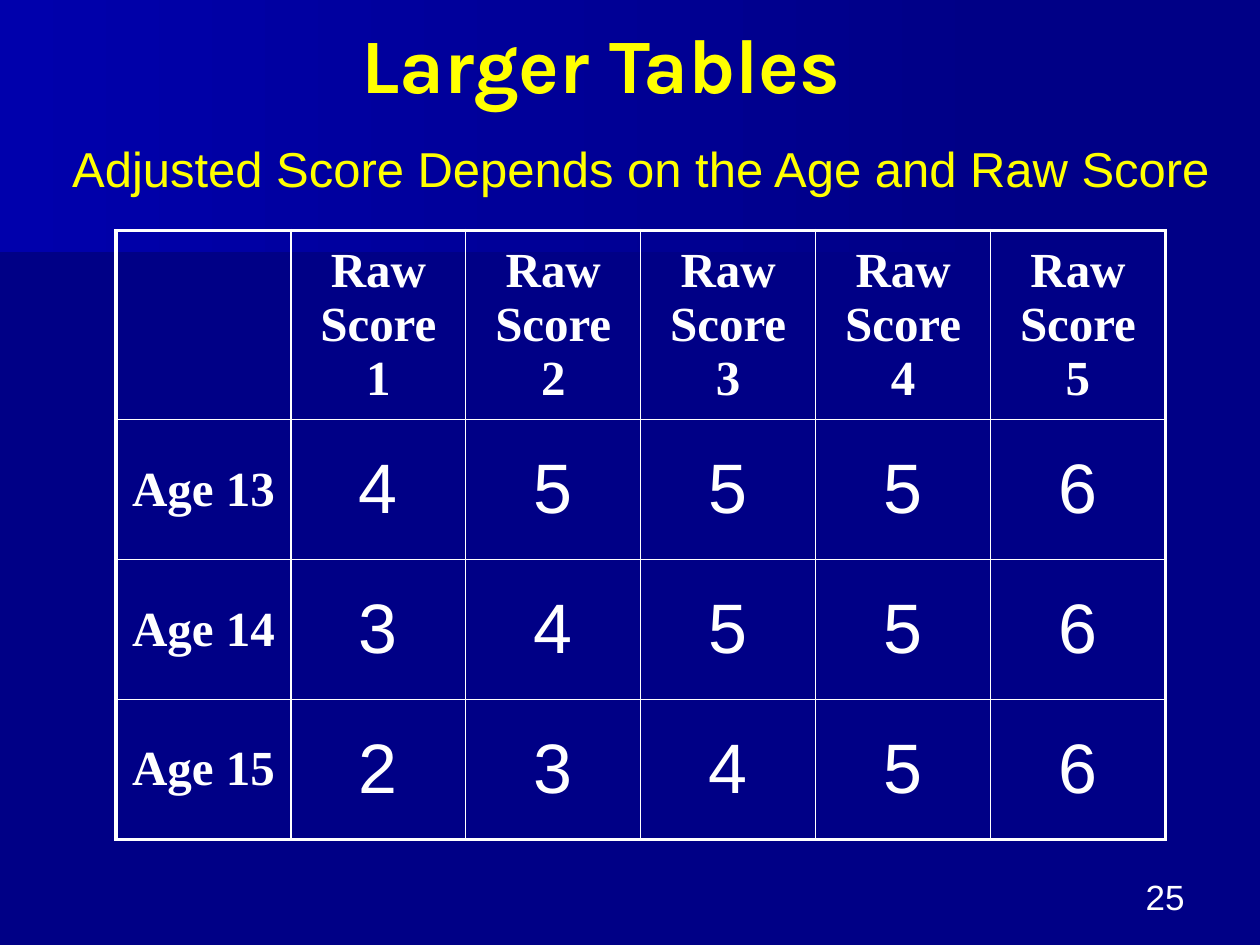
from dataclasses import dataclass

from lxml import etree
from pptx import Presentation
from pptx import util as u
from pptx.dml import color
from pptx.enum import text
from pptx.oxml import ns

WHITE, YELLOW, NAVY = "FFFFFF", "FFFF00", "000086"


@dataclass
class Band:
    points: list[tuple[float, float]]
    start_colour: str


BANDS = [
    Band([(0, 1.01), (7.79, 1.01), (7.78, 1.53), (0, 2.17)], "000083"),
    Band([(0, 0), (7.92, 0), (7.92, 1.62), (0, 2.08)], "0000AC"),
]

SCORES = {
    "Age 13": [4, 5, 5, 5, 6],
    "Age 14": [3, 4, 5, 5, 6],
    "Age 15": [2, 3, 4, 5, 6],
}


def rgb(value: str) -> color.RGBColor:
    return color.RGBColor.from_string(value)


def write(frame, words: str, *, size: float, font: str = "Arial",
          colour: str = WHITE, bold: bool = False,
          align=text.PP_ALIGN.CENTER) -> None:
    paragraph = frame.paragraphs[0]
    paragraph.alignment = align
    paragraph.space_before = u.Pt(0)
    run = paragraph.add_run()
    run.text = words
    run.font.size = u.Pt(size)
    run.font.name = font
    run.font.bold = bold
    run.font.color.rgb = rgb(colour)


def place(shape, left: float, top: float, width: float, height: float) -> None:
    shape.left, shape.top = u.Inches(left), u.Inches(top)
    shape.width, shape.height = u.Inches(width), u.Inches(height)


def add_text(slide, left: float, top: float, width: float, height: float,
             words: str, anchor=text.MSO_ANCHOR.TOP, **style):
    box = slide.shapes.add_textbox(0, 0, 0, 0)
    place(box, left, top, width, height)
    box.text_frame.word_wrap = True
    box.text_frame.vertical_anchor = anchor
    write(box.text_frame, words, **style)
    return box


def draw_band(slide, band: Band) -> None:
    builder = slide.shapes.build_freeform(*band.points[0], scale=u.Inches(1))
    builder.add_line_segments(band.points[1:], close=True)
    shape = builder.convert_to_shape()
    shape.shadow.inherit = False
    shape.line.fill.background()
    shape.fill.gradient()
    shape.fill.gradient_angle = 0
    for stop, value in zip(shape.fill.gradient_stops, (band.start_colour, NAVY)):
        stop.color.rgb = rgb(value)


def set_borders(cell, widths: dict[str, float]) -> None:
    properties = cell._tc.get_or_add_tcPr()
    for side, width in widths.items():
        line = etree.SubElement(properties, ns.qn(f"a:ln{side}"), w=str(u.Pt(width)))
        fill = etree.SubElement(line, ns.qn("a:solidFill"))
        etree.SubElement(fill, ns.qn("a:srgbClr"), val=WHITE)


def draw_score_table(slide) -> None:
    header = [""] + [f"Raw Score {score}" for score in range(1, 6)]
    grid = [header] + [[age, *values] for age, values in SCORES.items()]
    last_row, last_column = len(grid) - 1, len(header) - 1
    table = slide.shapes.add_table(
        len(grid), len(header), u.Inches(0.92), u.Inches(1.83),
        u.Inches(8.33), u.Inches(4.72)).table
    table.first_row = table.horz_banding = False
    for column in table.columns:
        column.width = u.Inches(8.33 / len(header))
    for r, values in enumerate(grid):
        table.rows[r].height = u.Inches(1.11 if r else 1.39)
        for c, value in enumerate(values):
            cell = table.cell(r, c)
            cell.vertical_anchor = text.MSO_ANCHOR.MIDDLE
            # Thick outer frame, thin inner rules
            edges = {"L": c == 0, "R": c == last_column,
                     "T": r == 0, "B": r == last_row}
            set_borders(cell, {side: 2.25 if outer else 1
                               for side, outer in edges.items()})
            cell.fill.background()
            if r and c:
                write(cell.text_frame, str(value), size=40)
            elif value:
                write(cell.text_frame, value, size=28,
                      font="Times New Roman", bold=True)


def main() -> None:
    deck = Presentation()
    deck.slide_width, deck.slide_height = u.Inches(10), u.Inches(7.5)
    slide = deck.slides.add_slide(deck.slide_layouts[5])

    # Backdrop
    slide.background.fill.solid()
    slide.background.fill.fore_color.rgb = rgb(NAVY)
    for band in BANDS:
        draw_band(slide, band)

    # Title, brought in front of the backdrop
    title = slide.shapes.title
    slide.shapes._spTree.append(title._element)
    place(title, 0.52, -0.13, 8.5, 1.25)
    title.text_frame.vertical_anchor = text.MSO_ANCHOR.MIDDLE
    write(title.text_frame, "Larger Tables", size=44, font="Karla",
          colour=YELLOW, bold=True)

    # Subtitle
    subtitle = add_text(slide, 0.42, 1, 9.33, 1.83,
                        "Adjusted Score Depends on the Age and Raw Score",
                        size=28, colour=YELLOW)
    subtitle.text_frame.margin_top = u.Inches(0.1)

    draw_score_table(slide)

    # Slide number
    add_text(slide, 7.17, 6.83, 2.33, 0.5, "25", text.MSO_ANCHOR.BOTTOM,
             size=20, align=text.PP_ALIGN.RIGHT)

    deck.save("out.pptx")


if __name__ == "__main__":
    main()
